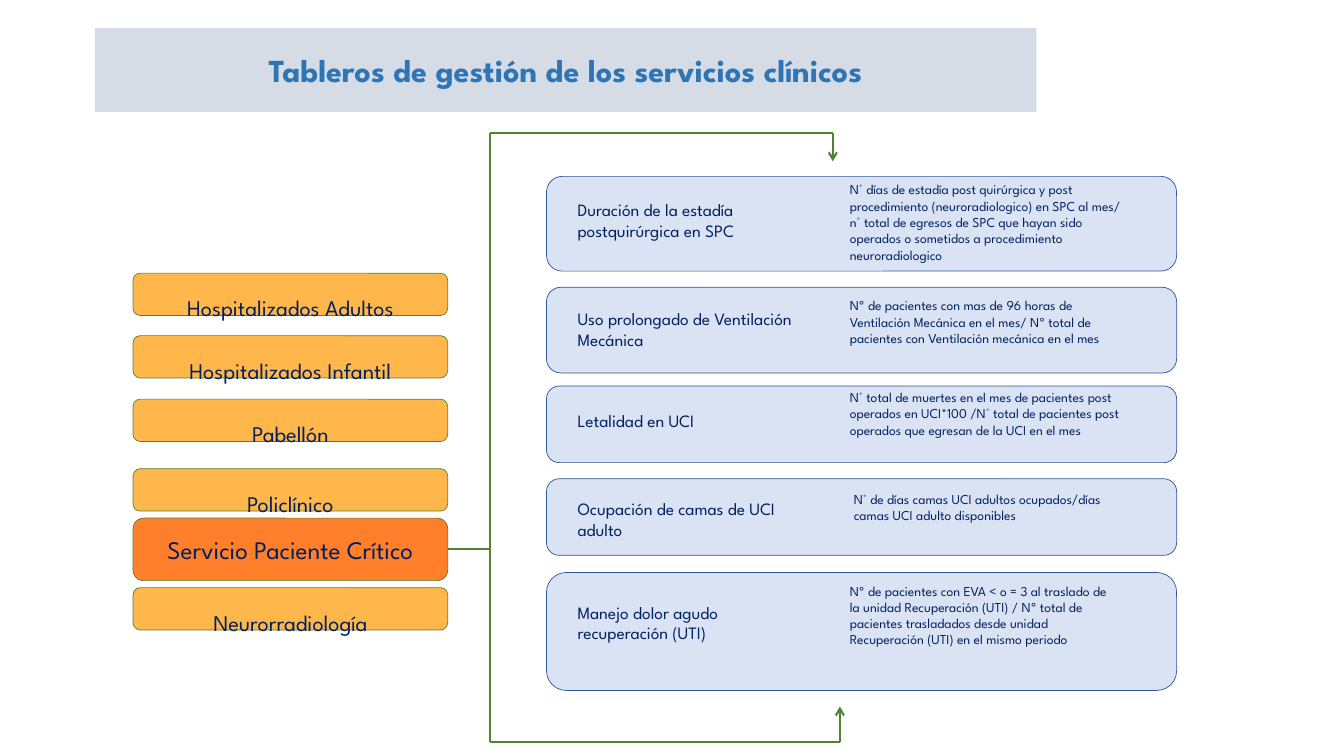
"""Build the slide of management dashboards for the clinical services."""
from dataclasses import dataclass

from pptx import Presentation
from pptx import util as u
from pptx.dml.color import RGBColor
from pptx.enum import shapes, text
from pptx.oxml.ns import qn
from lxml import etree


@dataclass(frozen=True)
class Theme:
    font: str = "League Spartan"
    ink: str = "002060"
    title: str = "2E75B6"
    banner: str = "D6DCE5"
    service: str = "FF9900"
    selected: str = "FF6600"
    green: str = "548235"
    panel: str = "DAE3F3"
    panel_line: str = "2F5597"
    title_size: float = 22.9
    selected_size: float = 18
    service_size: float = 16
    label_size: float = 12.4
    formula_size: float = 9.7


theme = Theme()


def rounded_box(s, left, top, width, height, fill, line):
    sp = s.shapes.add_shape(shapes.MSO_SHAPE.ROUNDED_RECTANGLE, u.Inches(left),
                            u.Inches(top), u.Inches(width), u.Inches(height))
    sp.shadow.inherit = False
    sp.fill.solid()
    sp.fill.fore_color.rgb = RGBColor.from_string(fill)
    sp.line.color.rgb = RGBColor.from_string(line)
    sp.line.width = u.Pt(0.5)
    return sp


def write(sp, words, size, color=theme.ink, align=text.PP_ALIGN.LEFT):
    tf = sp.text_frame
    tf.word_wrap = True
    p = tf.paragraphs[0]
    p.text = words
    p.alignment = align
    p.font.name = theme.font
    p.font.size = u.Pt(size)
    p.font.color.rgb = RGBColor.from_string(color)
    return p


prs = Presentation()
prs.slide_width, prs.slide_height = u.Inches(13.33), u.Inches(7.5)
s = prs.slides.add_slide(prs.slide_layouts[5])

title = s.shapes.title
title.left, title.top = u.Inches(0.94), u.Inches(0.28)
title.width, title.height = u.Inches(9.34), u.Inches(0.83)
title.fill.solid()
title.fill.fore_color.rgb = RGBColor.from_string(theme.banner)
p = write(title, "Tableros de gestión de los servicios clínicos", theme.title_size,
          theme.title, text.PP_ALIGN.CENTER)
p.font.bold = True
title.text_frame.vertical_anchor = text.MSO_ANCHOR.MIDDLE
title.text_frame.auto_size = text.MSO_AUTO_SIZE.NONE

services = [
    ("Hospitalizados Adultos", 2.71),
    ("Hospitalizados Infantil", 3.33),
    ("Pabellón", 3.96),
    ("Policlínico", 4.65),
    ("Servicio Paciente Crítico", 5.14),
    ("Neurorradiología", 5.83),
]
for name, top in services:
    is_selected = name == "Servicio Paciente Crítico"
    height, fill, alpha, size, spacing = (
        (0.62, theme.selected, 83, theme.selected_size, 1) if is_selected
        else (0.42, theme.service, 70, theme.service_size, 2.0))
    sp = rounded_box(s, 1.32, top, 3.12, height, fill, theme.green)
    color = sp.fill._xPr.find(qn("a:solidFill"))[0]
    etree.SubElement(color, qn("a:alpha"), val=str(alpha * 1000))
    p = write(sp, name, size, align=text.PP_ALIGN.CENTER)
    p.line_spacing = float(spacing)
    sp.text_frame.vertical_anchor = text.MSO_ANCHOR.MIDDLE
    if is_selected:
        selected_box = sp

indicators = [
    (1.75, 0.94, "Duración de la estadía postquirúrgica en SPC", 1.93, 2.5,
     "N° días de estadía post quirúrgica y post procedimiento (neuroradiologico) en SPC "
     "al mes/ n° total de egresos de SPC que hayan sido operados o sometidos a "
     "procedimiento neuroradiologico", 8.33, 1.75, 2.92, 0.92),
    (2.85, 0.85, "Uso prolongado de Ventilación Mecánica", 3.01, 2.64,
     "Nº de pacientes con mas de 96 horas de Ventilación Mecánica en el mes/ Nº total "
     "de pacientes con Ventilación mecánica en el mes", 8.33, 2.9, 2.92, 1.08),
    (3.83, 0.76, "Letalidad en UCI", 4.02, 2.57,
     "N° total de muertes en el mes de pacientes post operados en UCI*100 /N° total de "
     "pacientes post operados que egresan de la UCI en el mes", 8.33, 3.81, 2.88, 0.75),
    (4.75, 0.76, "Ocupación de camas de UCI adulto", 4.89, 2.5,
     "N° de días camas UCI adultos ocupados/días camas UCI adulto disponibles",
     8.37, 4.82, 2.88, 0.59),
    (5.68, 1.17, "Manejo dolor agudo recuperación (UTI)", 5.92, 2.5,
     "Nº de pacientes con EVA < o = 3 al traslado de la unidad Recuperación (UTI) / Nº "
     "total de pacientes trasladados desde unidad Recuperación (UTI) en el mismo periodo",
     8.33, 5.73, 2.78, 1.08),
]
for (top, height, label, label_top, label_width,
     formula, left, formula_top, width, formula_height) in indicators:
    rounded_box(s, 5.42, top, 6.25, height, theme.panel, theme.panel_line)
    for words, size, box in (
            (label, theme.label_size, (5.63, label_top, label_width, 0.52)),
            (formula, theme.formula_size, (left, formula_top, width, formula_height))):
        write(s.shapes.add_textbox(*map(u.Inches, box)), words, size)

trunk, upper, lower = 4.86, 1.32, 7.36
bracket = [
    (trunk, 5.45, 4.44, 5.45, False),
    (trunk, upper, trunk, lower, False),
    (8.33, lower, trunk, lower, False),
    (8.26, upper, trunk, upper, False),
    (8.33, lower, 8.33, 7.01, True),
    (8.26, upper, 8.26, 1.6, True),
]
for x1, y1, x2, y2, has_arrow in bracket:
    line = s.shapes.add_connector(shapes.MSO_CONNECTOR.STRAIGHT,
                                  *map(u.Inches, (x1, y1, x2, y2)))
    line.line.color.rgb = RGBColor.from_string(theme.green)
    line.line.width = u.Pt(1.5)
    if has_arrow:
        etree.SubElement(line.line._get_or_add_ln(), qn("a:tailEnd"), type="arrow")
    etree.SubElement(line._element.spPr, qn("a:effectLst"))
    if x2 == 4.44:
        line.end_connect(selected_box, 3)

prs.save("out.pptx")
